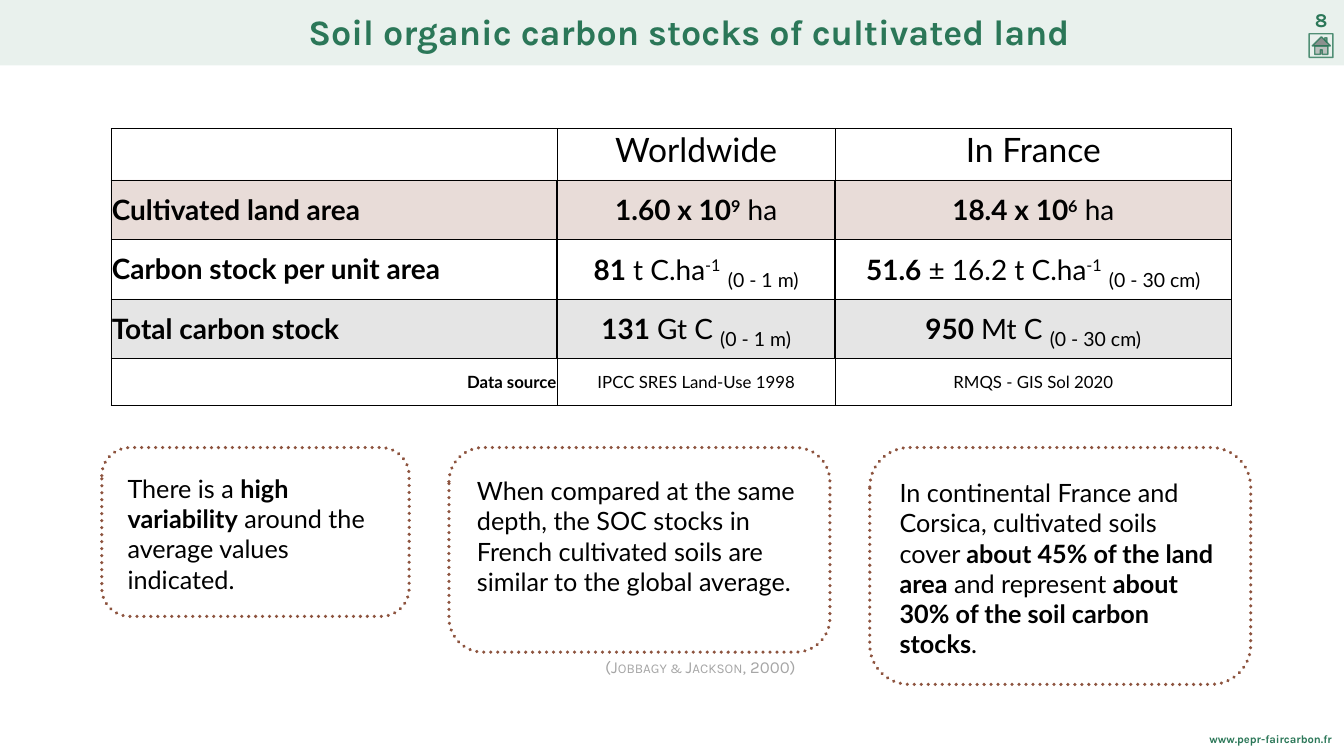
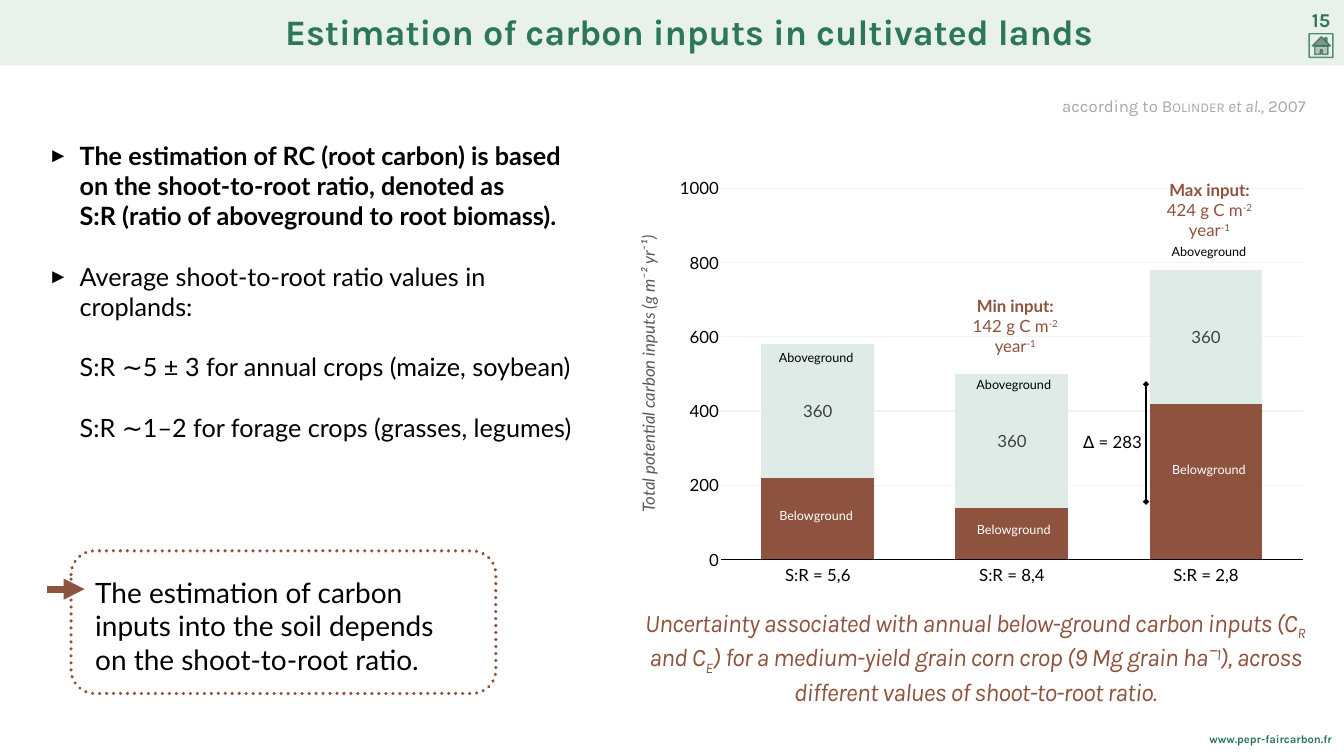
import pptx
import pptx.chart.data
import pptx.dml.color
import pptx.enum.chart
import pptx.enum.dml
import pptx.enum.shapes
import pptx.enum.text
import pptx.oxml
import pptx.oxml.ns
import pptx.util

Inches, Pt = pptx.util.Inches, pptx.util.Pt
qn = pptx.oxml.ns.qn
ALIGN = pptx.enum.text.PP_ALIGN
ANCHOR = pptx.enum.text.MSO_ANCHOR
SHAPE = pptx.enum.shapes.MSO_SHAPE

# The grid: one column and one row are each one inch.
COLUMNS, ROWS = 26.67, 15
GREEN, BROWN, MINT = "2B7758", "8D533E", "DFEBE6"
BLACK, WHITE, GREY = "000000", "FFFFFF", "A6A6A6"
LATO, KARLA = "Lato", "Karla"
HARD_SPACE = chr(160)

BOLD, ITALIC, SMALL_CAPS = {"bold": True}, {"italic": True}, {"caps": True}
SUPER, SUB = {"base": 30}, {"base": -25}
BOLD_SUPER = {**BOLD, **SUPER}
DEPTH = {"base": -20, "size": 48}

WEBSITE = "www.pepr-faircarbon.fr"

# House icon, in hundredths of a column
ICON_LEFT, ICON_TOP, ICON_SIDE = 25.98, 0.67, 0.47
CHIMNEY = [(35, 17), (35, 8), (31, 8), (31, 12)]
WALLS = [(11, 24), (11, 41), (22, 41), (22, 32), (26, 32), (26, 41), (37, 41), (37, 24)]
ROOF = [(24, 6), (6, 24), (42, 24)]
DOOR = [(22, 32), (26, 32), (26, 41), (22, 41)]
ICON_PARTS = [([CHIMNEY, WALLS], 20), ([ROOF, DOOR], 40)]

STOCKS_TITLE = "Soil organic carbon stocks of cultivated land"
STOCK_COLUMNS = [8.86, 5.51, 7.87]
# height, text size, fill with opacity, cells
STOCK_ROWS = [
    (1.02, 48, None, [[], [("Worldwide", {})], [("In France", {})]]),
    (1.18, 40, (BROWN, 20), [
        [("Cultivated land area", BOLD)],
        [("1.60 x 10", BOLD), ("9", BOLD_SUPER), (" ha", {})],
        [("18.4 x 10", BOLD), ("6", BOLD_SUPER), (" ha", {})]]),
    (1.18, 40, None, [
        [("Carbon stock per unit area", BOLD)],
        [("81", BOLD), (" t C.ha", {}), ("-1", SUPER), (" ", {}), ("(0 - 1 m)", DEPTH)],
        [("51.6", BOLD), (" ± 16.2 t C.ha", {}), ("-1", SUPER), (" ", {}), ("(0 - 30 cm)", DEPTH)]]),
    (1.18, 40, (BLACK, 10), [
        [("Total carbon stock", BOLD)],
        [("131", BOLD), (" Gt C ", {}), ("(0 - 1 m)", DEPTH)],
        [("950", BOLD), (" Mt C ", {}), ("(0 - 30 cm)", DEPTH)]]),
    (0.94, 24, None, [
        [("Data source", BOLD)], [("IPCC SRES Land-Use 1998", {})], [("RMQS - GIS Sol 2020", {})]]),
]
# left, width, height, runs
STOCK_CALLOUTS = [
    (2.02, 6.1, 3.35, [("There is a ", {}), ("high variability", BOLD),
                       (" around the average values indicated.", {})]),
    (8.91, 7.56, 4.06, [("When compared at the same depth, the SOC stocks in French "
                         "cultivated soils are similar to the global average.", {})]),
    (17.26, 7.56, 4.7, [("In continental France and Corsica, cultivated soils cover ", {}),
                        ("about 45% of the land area", BOLD), (" and represent ", {}),
                        ("about 30% of the soil carbon stocks", BOLD), (".", {})]),
]
STOCK_CITATION = [("(", {}), ("Jobbagy & Jackson", SMALL_CAPS), (", 2000)", {})]

INPUTS_TITLE = "Estimation of carbon inputs in cultivated lands"
INPUTS_CITATION = [("according to ", {}), ("Bolinder ", SMALL_CAPS), ("et al.", ITALIC), (", 2007", {})]
# text, options, has a bullet
RATIO_POINTS = [
    ("The estimation of RC (root carbon) is based on the shoot-to-root ratio, "
     f"denoted as S:R{HARD_SPACE}(ratio of aboveground to root biomass).", BOLD, True),
    ("Average shoot-to-root ratio values in croplands:", {}, True),
    (f"S:R{HARD_SPACE}∼5 ± 3 for annual crops (maize, soybean)", {}, False),
    (f"S:R{HARD_SPACE}∼1–2 for forage crops (grasses, legumes)", {}, False),
]
RATIO_MESSAGE = [("The estimation of carbon inputs into the soil depends on the shoot-to-root ratio.", {})]
CAPTION = [("Uncertainty associated with annual below-ground carbon inputs (C", {}), ("R", SUB),
           (" and C", {}), ("E", SUB),
           (") for a medium-yield grain corn crop (9 Mg grain ha⁻¹), "
            "across different values of shoot-to-root ratio.", {})]
AXIS_TITLE = "Total potential carbon inputs (g m⁻² yr⁻¹)"
# category, belowground, aboveground, heights of the two labels on the value axis, label shift
BARS = [
    ("S:R = 5,6", 220, 360, 119, 545, -0.03),
    ("S:R = 8,4", 140, 360, 80, 472, 0.04),
    ("S:R = 2,8", 420, 360, 243, 830, 0.06),
]
# bar, height of the note's top on the value axis, heading, amount
BAR_NOTES = [(1, 718, "Min input:", "142"), (2, 1030, "Max input:", "424")]
DELTA_RANGE = (472, 156)
AXIS_MAX = 1000
CHART_AREA = (13.49, 3.33, 12.43, 8.43)
PLOT_SHARES = {"x": 0.065, "y": 0.048, "w": 0.93, "h": 0.874}


def rgb(colour):
    return pptx.dml.color.RGBColor.from_string(colour)


def area(left, top, width, height):
    return [Inches(length) for length in (left, top, width, height)]


def paint(fill, holder, colour, opacity=100):
    """Fill with a colour; holder is the XML element that carries the fill."""
    fill.solid()
    fill.fore_color.rgb = rgb(colour)
    if opacity < 100:
        tone = holder.find(qn("a:solidFill"))[0]
        tone.append(tone.makeelement(qn("a:alpha"), {"val": str(opacity * 1000)}))


def add_runs(paragraph, runs, size, font=LATO, colour=BLACK, align=None, **common):
    paragraph.alignment = align
    for text, own in runs:
        options = {**common, **own}
        run = paragraph.add_run()
        run.text = text
        run.font.name = font
        run.font.size = Pt(options.get("size", size))
        run.font.color.rgb = rgb(colour)
        run.font.bold = options.get("bold", False)
        run.font.italic = options.get("italic", False)
        properties = run.font._element
        if "base" in options:
            properties.set("baseline", str(options["base"] * 1000))
        if "caps" in options:
            properties.set("cap", "small")
        if "spacing" in options:
            properties.set("spc", str(options["spacing"] * 100))


def set_frame(frame, inset, wrap=True, anchor=ANCHOR.TOP):
    frame.margin_left = frame.margin_right = frame.margin_top = frame.margin_bottom = Inches(inset)
    frame.word_wrap = wrap
    frame.auto_size = pptx.enum.text.MSO_AUTO_SIZE.NONE
    frame.vertical_anchor = anchor


def add_text(slide, box, paragraphs, size, inset=0.05, wrap=True, **style):
    shape = slide.shapes.add_textbox(*area(*box))
    frame = shape.text_frame
    set_frame(frame, inset, wrap)
    for index, runs in enumerate(paragraphs):
        paragraph = frame.add_paragraph() if index else frame.paragraphs[0]
        add_runs(paragraph, runs, size, **style)
    return shape


def add_icon_path(slide, contours):
    builder = slide.shapes.build_freeform(*contours[0][0], scale=Inches(0.01))
    for contour in contours:
        builder.move_to(*contour[0])
        builder.add_line_segments(contour[1:], close=True)
    shape = builder.convert_to_shape(Inches(ICON_LEFT), Inches(ICON_TOP))
    shape.shadow.inherit = False
    return shape


def add_house_icon(slide):
    for contours, opacity in ICON_PARTS:
        shape = add_icon_path(slide, contours)
        paint(shape.fill, shape.element.spPr, BLACK, opacity)
        shape.line.fill.background()
    side = round(ICON_SIDE * 100)
    frame = [(0, 0), (side, 0), (side, side), (0, side)]
    outline = add_icon_path(slide, [frame, CHIMNEY, WALLS, ROOF])
    outline.fill.background()
    outline.line.width = Pt(2)
    paint(outline.line.fill, outline.element.spPr.find(qn("a:ln")), GREEN, 80)


def new_slide(presentation, layout, title, number):
    """Add a slide with the shared band, icon, footer, number and title."""
    slide = presentation.slides.add_slide(presentation.slide_layouts[layout])
    band = slide.shapes.add_shape(SHAPE.RECTANGLE, *area(0, 0, COLUMNS, 1.3))
    band.shadow.inherit = False
    paint(band.fill, band.element.spPr, GREEN, 10)
    band.line.fill.background()
    add_house_icon(slide)
    green_bold = {"font": KARLA, "colour": GREEN, "bold": True}
    add_text(slide, (23.95, 14.48, 2.53, 0.5), [[(WEBSITE, {})]], 16, align=ALIGN.RIGHT, **green_bold)
    add_text(slide, (25.94, 0.11, 0.55, 0.57), [[(number, {})]], 28,
             wrap=False, align=ALIGN.CENTER, **green_bold)
    heading = slide.shapes.title
    heading.left, heading.top, heading.width, heading.height = area(2.08, 0.2, 23.19, 0.94)
    set_frame(heading.text_frame, 0.06, anchor=ANCHOR.MIDDLE)
    paragraph = heading.text_frame.paragraphs[0]
    paragraph.line_spacing = 0.9
    add_runs(paragraph, [(title, {})], 51.1, align=ALIGN.CENTER, **green_bold)
    return slide


def add_callout(slide, left, top, width, height, runs, size):
    outline = slide.shapes.add_shape(SHAPE.ROUNDED_RECTANGLE, *area(left, top, width, height))
    outline.shadow.inherit = False
    outline.fill.background()
    outline.line.color.rgb = rgb(BROWN)
    outline.line.width = Pt(5)
    outline.line.dash_style = pptx.enum.dml.MSO_LINE.ROUND_DOT
    outline.element.spPr.find(qn("a:ln")).set("cap", "rnd")
    pad = 0.06 * height
    add_text(slide, (left + pad, top + pad, width - 2 * pad, height - 2 * pad), [runs], size, inset=0.31)


def set_border(cell, side, width):
    properties = cell._tc.get_or_add_tcPr()
    properties.append(pptx.oxml.parse_xml(
        f'<a:{side} {pptx.oxml.ns.nsdecls("a")} w="{Pt(width)}"><a:solidFill>'
        f'<a:srgbClr val="{BLACK}"/></a:solidFill></a:{side}>'))


def add_stock_table(slide):
    heights = [row[0] for row in STOCK_ROWS]
    box = area(2.2, 2.55, sum(STOCK_COLUMNS), sum(heights))
    table = slide.shapes.add_table(len(heights), len(STOCK_COLUMNS), *box).table
    table.first_row = table.horz_banding = False
    for column, width in zip(table.columns, STOCK_COLUMNS):
        column.width = Inches(width)
    last_row, last_column = len(heights) - 1, len(STOCK_COLUMNS) - 1
    for r, (height, size, fill, cells) in enumerate(STOCK_ROWS):
        table.rows[r].height = Inches(height)
        inner = 3 if 0 < r < last_row else 1
        for c, runs in enumerate(cells):
            cell = table.cell(r, c)
            cell.margin_left = cell.margin_right = cell.margin_top = cell.margin_bottom = Inches(0.02)
            cell.vertical_anchor = ANCHOR.MIDDLE if r else ANCHOR.TOP
            first_align = ALIGN.RIGHT if r == last_row else ALIGN.LEFT
            add_runs(cell.text_frame.paragraphs[0], runs, size, align=ALIGN.CENTER if c else first_align)
            for side, width in (("lnL", inner if c else 1), ("lnR", inner if c < last_column else 1),
                                ("lnT", 1), ("lnB", 1)):
                set_border(cell, side, width)
            if fill:
                paint(cell.fill, cell._tc.tcPr, *fill)
            else:
                cell.fill.background()


def add_line(slide, start, end, colour, width, **ends):
    points = [Inches(length) for length in (*start, *end)]
    line = slide.shapes.add_connector(pptx.enum.shapes.MSO_CONNECTOR.STRAIGHT, *points)
    line.line.color.rgb = rgb(colour)
    line.line.width = Pt(width)
    properties = line.element.spPr
    outline = properties.find(qn("a:ln"))
    for end_name, kind in ends.items():
        outline.append(outline.makeelement(qn(f"a:{end_name}"), {"type": kind}))
    properties.append(properties.makeelement(qn("a:effectLst"), {}))


def add_ratio_points(slide):
    body = slide.placeholders[1]
    body.left, body.top, body.width, body.height = area(0.91, 2.73, 10.69, 7.1)
    frame = body.text_frame
    set_frame(frame, 0.05)
    for index, (text, options, bullet) in enumerate(RATIO_POINTS):
        paragraph = frame.add_paragraph() if index else frame.paragraphs[0]
        properties = paragraph._p.get_or_add_pPr()
        properties.set("marL", str(Inches(0.62)))
        properties.set("indent", str(Inches(-0.62) if bullet else 0))
        marks = [("buSzPct", {"val": "80000"}), ("buFont", {"typeface": "Arial"}),
                 ("buChar", {"char": "►"})] if bullet else [("buNone", {})]
        for tag, attributes in marks:
            properties.append(properties.makeelement(qn(f"a:{tag}"), attributes))
        paragraph.space_before = Pt(43 if index else 0)
        add_runs(paragraph, [(text, options)], 36, align=ALIGN.LEFT)


def set_font(font, colour):
    font.name, font.size = LATO, Pt(24)
    font.color.rgb = rgb(colour)


def add_inputs_chart(slide):
    data = pptx.chart.data.CategoryChartData()
    data.categories = [bar[0] for bar in BARS]
    data.add_series("Belowground", [bar[1] for bar in BARS])
    data.add_series("Aboveground", [bar[2] for bar in BARS])
    kind = pptx.enum.chart.XL_CHART_TYPE.COLUMN_STACKED
    chart = slide.shapes.add_chart(kind, *area(*CHART_AREA), data).chart
    chart.has_legend = chart.has_title = False
    chart.font.name, chart.font.size = "Arial", Pt(10)
    plot = chart.plots[0]
    plot.gap_width, plot.overlap, plot.vary_by_categories = 72, 100, False
    for series, colour in zip(plot.series, (BROWN, MINT)):
        series.format.fill.solid()
        series.format.fill.fore_color.rgb = rgb(colour)
    labels = plot.series[1].data_labels
    labels.show_value = True
    labels.position = pptx.enum.chart.XL_LABEL_POSITION.CENTER
    set_font(labels.font, "404040")
    categories, values = chart.category_axis, chart.value_axis
    for axis in (categories, values):
        axis.major_tick_mark = axis.minor_tick_mark = pptx.enum.chart.XL_TICK_MARK.NONE
        set_font(axis.tick_labels.font, BLACK)
    categories.tick_label_position = pptx.enum.chart.XL_TICK_LABEL_POSITION.LOW
    categories.format.line.color.rgb = rgb(BLACK)
    categories.format.line.width = Pt(2)
    values.minimum_scale, values.maximum_scale, values.major_unit = 0, AXIS_MAX, 200
    values.format.line.fill.background()
    values.major_gridlines.format.line.color.rgb = rgb("F2F2F2")
    values.major_gridlines.format.line.width = Pt(2)
    plot_area = chart._chartSpace.chart.plotArea
    for old in plot_area.findall(qn("c:layout")):
        plot_area.remove(old)
    parts = '<c:layoutTarget val="inner"/><c:xMode val="edge"/><c:yMode val="edge"/>'
    parts += "".join(f'<c:{name} val="{share}"/>' for name, share in PLOT_SHARES.items())
    plot_area.insert(0, pptx.oxml.parse_xml(
        f'<c:layout {pptx.oxml.ns.nsdecls("c")}><c:manualLayout>{parts}</c:manualLayout></c:layout>'))


def bar_centre(index):
    left, _, width, _ = CHART_AREA
    return left + width * (PLOT_SHARES["x"] + PLOT_SHARES["w"] * (index + 0.5) / len(BARS))


def value_row(value):
    """Row of the slide at which a value lies on the chart."""
    _, top, _, height = CHART_AREA
    return top + height * (PLOT_SHARES["y"] + PLOT_SHARES["h"] * (1 - value / AXIS_MAX))


def add_chart_notes(slide):
    for index, (_, _, _, below, above, shift) in enumerate(BARS):
        for text, value, colour in (("Aboveground", above, BLACK), ("Belowground", below, WHITE)):
            box = (bar_centre(index) + shift - 0.8, value_row(value) - 0.2, 1.6, 0.4)
            add_text(slide, box, [[(text, {})]], 18, wrap=False, colour=colour, align=ALIGN.CENTER)
    for index, value, heading, amount in BAR_NOTES:
        box = (bar_centre(index) - 1.17, value_row(value), 2.48, 0.91)
        unit = [(f"{amount} g C m", {}), ("-2", SUPER), (" year", {}), ("-1", SUPER)]
        add_text(slide, box, [[(heading, BOLD)], unit], 24, colour=BROWN, align=ALIGN.CENTER)
    column = bar_centre(2) - 1.19
    top, bottom = [value_row(value) for value in DELTA_RANGE]
    add_line(slide, (column, top), (column, bottom), BLACK, 3, headEnd="diamond", tailEnd="diamond")
    add_text(slide, (column - 1.3, (top + bottom) / 2 - 0.27, 1.26, 0.51), [[("∆ = 283", {})]], 24, wrap=False)


def build_stocks_slide(presentation):
    slide = new_slide(presentation, 5, STOCKS_TITLE, "8")
    add_stock_table(slide)
    for left, width, height, runs in STOCK_CALLOUTS:
        add_callout(slide, left, 8.88, width, height, runs, 36)
    add_text(slide, (11.52, 12.98, 4.32, 0.51), [STOCK_CITATION], 24, font=KARLA, colour=GREY, align=ALIGN.RIGHT)


def build_inputs_slide(presentation):
    slide = new_slide(presentation, 1, INPUTS_TITLE, "15")
    add_text(slide, (19.26, 1.85, 6.7, 0.5), [INPUTS_CITATION], 24, font=KARLA, colour=GREY, align=ALIGN.RIGHT)
    add_ratio_points(slide)
    add_callout(slide, 1.41, 10.93, 8.43, 2.83, RATIO_MESSAGE, 40)
    add_line(slide, (1.68, 11.69), (0.93, 11.69), BROWN, 10, headEnd="triangle")
    add_text(slide, (12.61, 11.99, 13.49, 2), [CAPTION], 36, inset=0.06, font=KARLA, colour=BROWN,
             align=ALIGN.CENTER, italic=True, spacing=-1)
    axis_title = add_text(slide, (9.15, 7.17, 7.43, 0.5), [[(AXIS_TITLE, ITALIC)]], 24,
                          colour="595959", align=ALIGN.CENTER)
    axis_title.rotation = 270
    add_inputs_chart(slide)
    add_chart_notes(slide)


def main():
    presentation = pptx.Presentation()
    presentation.slide_width, presentation.slide_height = Inches(COLUMNS), Inches(ROWS)
    build_stocks_slide(presentation)
    build_inputs_slide(presentation)
    presentation.save("out.pptx")


if __name__ == "__main__":
    main()
